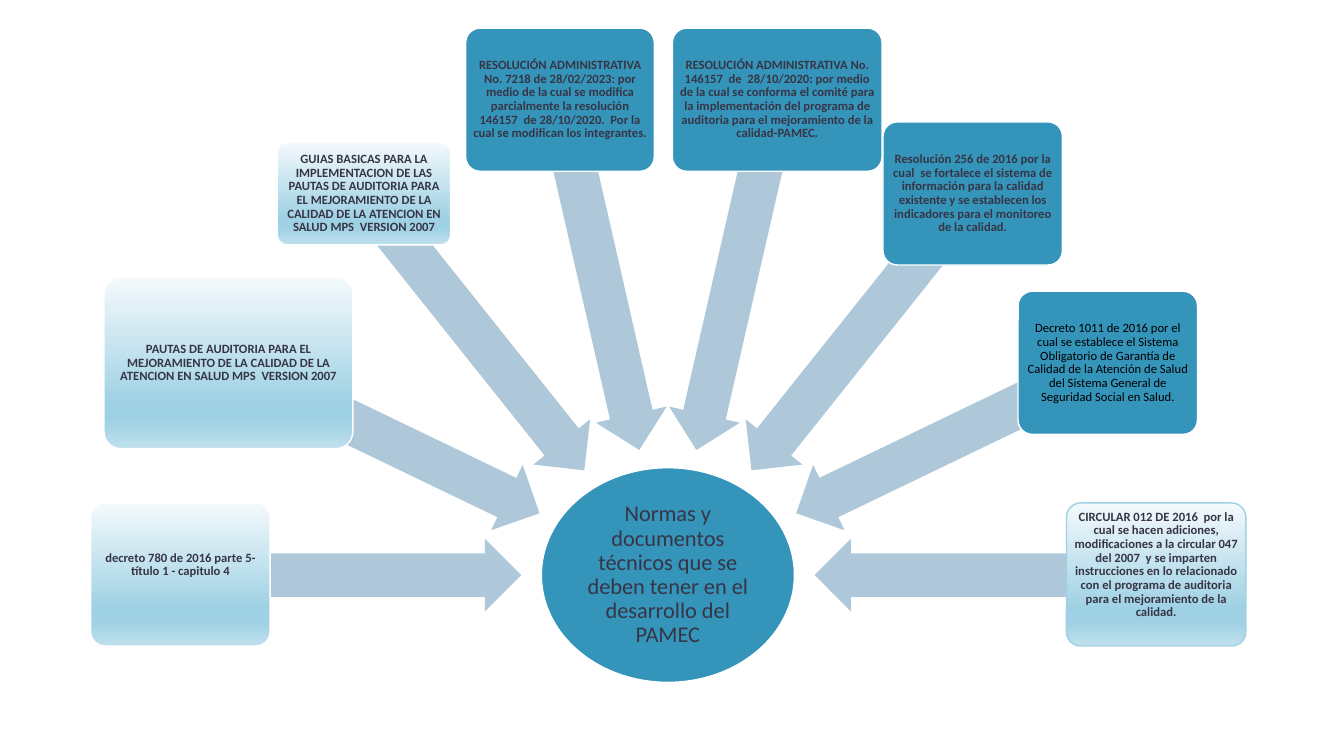
from dataclasses import dataclass
from math import cos, hypot, radians, sin

from pptx import Presentation
from pptx.dml.color import RGBColor
from pptx.enum.shapes import MSO_SHAPE
from pptx.enum.text import MSO_ANCHOR, PP_ALIGN
from pptx.oxml import parse_xml
from pptx.oxml.ns import nsdecls, qn
from pptx.util import Inches, Pt

W, H = Inches(13.333), Inches(7.5)
COL, ROW = W / 100, H / 100


@dataclass(frozen=True)
class Theme:
    font: str = "Calibri"
    hub_size: int = 16
    card_size: int = 9
    solid: str = "3494BA"
    arrow: str = "AEC8D9"
    ink: str = "373545"
    black: str = "000000"
    white: str = "FFFFFF"
    edge: str = "9FD1E4"
    fade: tuple = ((0, "F4FAFC"), (74, "9FD1E4"), (83, "9FD1E4"), (100, "BFE0ED"))


T = Theme()
HUB_TEXT = "Normas y documentos técnicos que se deben tener en el desarrollo del PAMEC"
HUB_BOX = (40.28, 61.87, 18.83, 28.4)
ARROW_GAP, ARROW_REACH, ARROW_THICK = 1.5 * COL, 36.3 * COL, 9.6 * ROW
FADED = {"faded": True}
RAISED = {"faded": True, "lift": 0.19}
CARDS = [
    ((6.75, 66.53, 13.35, 18.93), "decreto 780 de 2016 parte 5- título 1 - capitulo 4", RAISED),
    ((7.73, 36.67, 18.53, 22.67),
     "PAUTAS DE AUDITORIA PARA EL MEJORAMIENTO DE LA CALIDAD DE LA ATENCION "
     "EN SALUD MPS  VERSION 2007", FADED),
    ((20.63, 18.8, 12.9, 13.6),
     "GUIAS BASICAS PARA LA IMPLEMENTACION DE LAS PAUTAS DE AUDITORIA PARA EL "
     "MEJORAMIENTO DE LA CALIDAD DE LA ATENCION EN SALUD MPS  VERSION 2007", FADED),
    ((34.65, 3.73, 14.03, 18.93),
     "RESOLUCIÓN ADMINISTRATIVA No. 7218 de 28/02/2023: por medio de la cual se "
     "modifica parcialmente la resolución 146157  de 28/10/2020.  Por la cual se "
     "modifican los integrantes.", {}),
    ((50.03, 3.73, 15.6, 18.93),
     "RESOLUCIÓN ADMINISTRATIVA No. 146157  de  28/10/2020: por medio de la cual "
     "se conforma el comité para la implementación del programa de auditoria para "
     "el mejoramiento de la calidad-PAMEC.", {}),
    ((65.7, 16.13, 13.35, 18.93),
     "Resolución 256 de 2016 por la cual  se fortalece el sistema de información "
     "para la calidad existente y se establecen los indicadores para el monitoreo "
     "de la calidad.", {}),
    ((75.75, 38.53, 13.35, 18.93),
     "Decreto 1011 de 2016 por el cual se establece el Sistema Obligatorio de "
     "Garantía de Calidad de la Atención de Salud del Sistema General de Seguridad "
     "Social en Salud.", {"ink": T.black, "bold": False}),
    ((79.35, 66.53, 13.35, 18.93),
     "CIRCULAR 012 DE 2016  por la cual se hacen adiciones, modificaciones a la "
     "circular 047 del 2007  y se imparten instrucciones en lo relacionado con el "
     "programa de auditoria para el mejoramiento de la calidad.",
     {**RAISED, "edge": T.edge}),
]


def grid(box):
    x, y, w, h = box
    return x * COL, y * ROW, w * COL, h * ROW


def add_block(s, kind, box, fill, edge=None, adj=()):
    sp = s.shapes.add_shape(kind, *(round(v) for v in box))
    sp.shadow.inherit = False
    sp.fill.solid()
    sp.fill.fore_color.rgb = RGBColor.from_string(fill)
    if edge:
        sp.line.color.rgb = RGBColor.from_string(edge)
        sp.line.width = Pt(1)
    else:
        sp.line.fill.background()
    for i, value in enumerate(adj):
        sp.adjustments[i] = value
    return sp


def fade(sp):
    sp.fill.gradient()
    sp.fill.gradient_angle = 270
    stops = "".join(
        f'<a:gs pos="{pos * 1000}"><a:srgbClr val="{color}"/></a:gs>'
        for pos, color in T.fade
    )
    old = sp._element.spPr.find(qn("a:gradFill")).find(qn("a:gsLst"))
    new = parse_xml(f'<a:gsLst {nsdecls("a")}>{stops}</a:gsLst>')
    old.getparent().replace(old, new)


def write(sp, text, size, ink, bold, inset, lift=0):
    tf = sp.text_frame
    side = Inches(inset)
    frame = {
        "word_wrap": True, "vertical_anchor": MSO_ANCHOR.MIDDLE,
        "margin_left": side, "margin_right": side,
        "margin_top": side, "margin_bottom": Inches(inset + lift),
    }
    for name, value in frame.items():
        setattr(tf, name, value)
    p = tf.paragraphs[0]
    p.alignment, p.line_spacing = PP_ALIGN.CENTER, 0.9
    r = p.add_run()
    r.text = text
    for name, value in {"name": T.font, "size": Pt(size), "bold": bold}.items():
        setattr(r.font, name, value)
    r.font.color.rgb = RGBColor.from_string(ink)


def add_hub(s, box):
    sp = add_block(s, MSO_SHAPE.OVAL, box, T.solid, T.white)
    write(sp, HUB_TEXT, T.hub_size, T.ink, False, 0.01)


def add_spoke(s, hub, angle):
    x, y, w, h = hub
    a, b = w / 2 + ARROW_GAP, h / 2 + ARROW_GAP
    dx, dy = cos(radians(angle)), sin(radians(angle))
    tip = a * b / hypot(b * dx, a * dy)
    length, middle = ARROW_REACH - tip, (ARROW_REACH + tip) / 2
    cx, cy = x + w / 2 + middle * dx, y + h / 2 + middle * dy
    box = cx - length / 2, cy - ARROW_THICK / 2, length, ARROW_THICK
    sp = add_block(s, MSO_SHAPE.LEFT_ARROW, box, T.arrow, adj=(0.6, 0.5))
    sp.rotation = angle % 360


def add_card(s, box, text, faded=False, edge=T.white, ink=T.ink, bold=True, lift=0):
    sp = add_block(s, MSO_SHAPE.ROUNDED_RECTANGLE, box, T.solid, edge, (0.1,))
    if faded:
        fade(sp)
    write(sp, text, T.card_size, ink, bold, 0.02, lift)


def add_radial_slide(prs):
    s = prs.slides.add_slide(prs.slide_layouts[6])
    hub = grid(HUB_BOX)
    add_hub(s, hub)
    step = 180 / (len(CARDS) - 1)
    for i, (box, text, look) in enumerate(CARDS):
        add_spoke(s, hub, 180 + i * step)
        add_card(s, grid(box), text, **look)


def main():
    prs = Presentation()
    prs.slide_width, prs.slide_height = W, H
    add_radial_slide(prs)
    prs.save("out.pptx")


if __name__ == "__main__":
    main()
